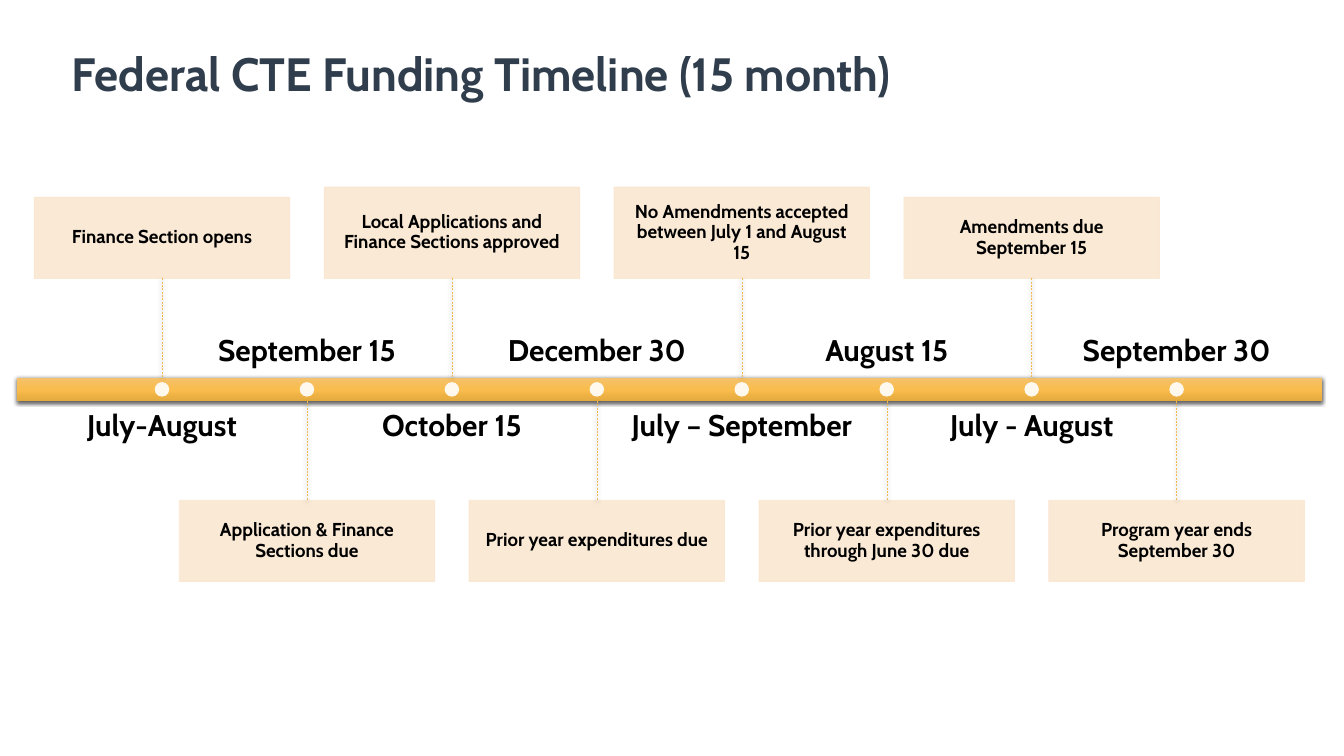
from copy import deepcopy

from lxml.etree import SubElement
from pptx import Presentation
from pptx.dml.color import RGBColor
from pptx.enum.dml import MSO_LINE
from pptx.enum.shapes import MSO_CONNECTOR, MSO_SHAPE
from pptx.enum.text import MSO_ANCHOR, PP_ALIGN
from pptx.oxml.ns import qn
from pptx.util import Pt

SLATE = RGBColor(0x2F, 0x3D, 0x4C)
BLACK = RGBColor(0x00, 0x00, 0x00)
WHITE = RGBColor(0xFF, 0xFF, 0xFF)
CREAM = RGBColor(0xFA, 0xE7, 0xD1)
AMBER = RGBColor(0xF1, 0xBA, 0x55)
BAR_STOPS = [
    (0, RGBColor(0xF4, 0xC2, 0x6D)),
    (0.5, RGBColor(0xF9, 0xBC, 0x4D)),
    (1, RGBColor(0xE5, 0xAA, 0x3D)),
]
FONT = "Cabin"

# Dates alternate below and above the bar; each event box is on the other side
MILESTONES = [
    ("July-August", "Finance Section opens", 87),
    ("September 15", "Application & Finance Sections due", 87),
    ("October 15", "Local Applications and Finance Sections approved", 98),
    ("December 30", "Prior year expenditures due", 87),
    ("July – September", "No Amendments accepted between July 1 and August 15", 98),
    ("August 15", "Prior year expenditures through June 30 due", 87),
    ("July - August", "Amendments due September 15", 87),
    ("September 30", "Program year ends September 30", 87),
]

FIRST_X, STEP = 173.6, 155.3
BAR_TOP, BAR_HEIGHT = 404.6, 25.2
BAR_BOTTOM = BAR_TOP + BAR_HEIGHT
STEM = 106.2
BOX_WIDTH = 273.6
DATE_WIDTH, DATE_HEIGHT, DATE_GAP = 248.4, 70.6, 10.4
DOT = 15.6


def add_shadow(properties):
    effects = properties.find(qn("a:effectLst"))
    if effects is None:
        effects = SubElement(properties, qn("a:effectLst"))
    shadow = SubElement(effects, qn("a:outerShdw"), blurRad=str(Pt(4.5)),
                        dist=str(Pt(1.5)), dir="5400000", rotWithShape="0")
    color = SubElement(shadow, qn("a:srgbClr"), val="000000")
    SubElement(color, qn("a:alpha"), val="63000")


def write_centered(frame, text, size, anchor, margin):
    frame.word_wrap = True
    frame.vertical_anchor = anchor
    frame.margin_left = frame.margin_right = Pt(margin)
    frame.margin_top = frame.margin_bottom = Pt(margin)
    frame.text = text
    paragraph = frame.paragraphs[0]
    paragraph.alignment = PP_ALIGN.CENTER
    paragraph.line_spacing = 0.9
    font = paragraph.runs[0].font
    font.name, font.size, font.bold = FONT, Pt(size), True
    font.color.rgb = BLACK


presentation = Presentation()
presentation.slide_width, presentation.slide_height = Pt(1440), Pt(810)
slide = presentation.slides.add_slide(presentation.slide_layouts[5])
shapes = slide.shapes

# Title
title = shapes.title
title.left, title.top, title.width, title.height = Pt(72), Pt(43.2), Pt(1295.3), Pt(86.4)
title_frame = title.text_frame
title_frame.text = "Federal CTE Funding Timeline (15 month)"
title_frame.vertical_anchor = MSO_ANCHOR.TOP
title_frame.margin_left = title_frame.margin_top = Pt(5)
title_frame.paragraphs[0].alignment = PP_ALIGN.LEFT
title_font = title_frame.paragraphs[0].runs[0].font
title_font.name, title_font.size, title_font.bold = FONT, Pt(50), True
title_font.color.rgb = SLATE

# Timeline bar
bar = shapes.add_shape(MSO_SHAPE.RECTANGLE, Pt(18), Pt(BAR_TOP), Pt(1398.2), Pt(BAR_HEIGHT))
bar.line.fill.background()
bar.fill.gradient()
bar.fill.gradient_angle = 270
stop_list = bar.element.spPr.find(".//" + qn("a:gsLst"))
stop_list.append(deepcopy(stop_list[0]))
for stop, (position, color) in zip(bar.fill.gradient_stops, BAR_STOPS):
    stop.position = position
    stop.color.rgb = color
bar.shadow.inherit = False
add_shadow(bar.element.spPr)

# Milestones
for index, (date, event, box_height) in enumerate(MILESTONES):
    center = FIRST_X + index * STEP
    if index % 2 == 0:
        stem_start, stem_end = BAR_TOP - STEM, BAR_TOP
        box_top = stem_start - box_height
        date_top, date_anchor = BAR_BOTTOM + DATE_GAP, MSO_ANCHOR.TOP
    else:
        stem_start, stem_end = BAR_BOTTOM, BAR_BOTTOM + STEM
        box_top = stem_end
        date_top, date_anchor = BAR_TOP - DATE_GAP - DATE_HEIGHT, MSO_ANCHOR.BOTTOM

    # Date
    date_label = shapes.add_textbox(Pt(center - DATE_WIDTH / 2), Pt(date_top),
                                    Pt(DATE_WIDTH), Pt(DATE_HEIGHT))
    write_centered(date_label.text_frame, date, 32, date_anchor, 0)

    # Event box
    event_box = shapes.add_shape(MSO_SHAPE.RECTANGLE, Pt(center - BOX_WIDTH / 2), Pt(box_top),
                                 Pt(BOX_WIDTH), Pt(box_height))
    event_box.fill.solid()
    event_box.fill.fore_color.rgb = CREAM
    event_box.line.color.rgb = CREAM
    event_box.line.width = Pt(1)
    write_centered(event_box.text_frame, event, 20, MSO_ANCHOR.MIDDLE, 15)

    # Dashed stem
    stem = shapes.add_connector(MSO_CONNECTOR.STRAIGHT, Pt(center), Pt(stem_start),
                                Pt(center), Pt(stem_end))
    stem.line.color.rgb = AMBER
    stem.line.width = Pt(0.5)
    stem.line.dash_style = MSO_LINE.DASH
    add_shadow(stem.element.spPr)

    # Dot on the bar
    dot = shapes.add_shape(MSO_SHAPE.OVAL, Pt(center - DOT / 2),
                           Pt(BAR_TOP + (BAR_HEIGHT - DOT) / 2), Pt(DOT), Pt(DOT))
    dot.fill.solid()
    dot.fill.fore_color.rgb = WHITE
    dot.line.fill.background()

    # Slight transparency
    for shape in (event_box, dot):
        shape.shadow.inherit = False
        for color in shape.element.spPr.iter(qn("a:srgbClr")):
            SubElement(color, qn("a:alpha"), val="90000")

presentation.save("out.pptx")
